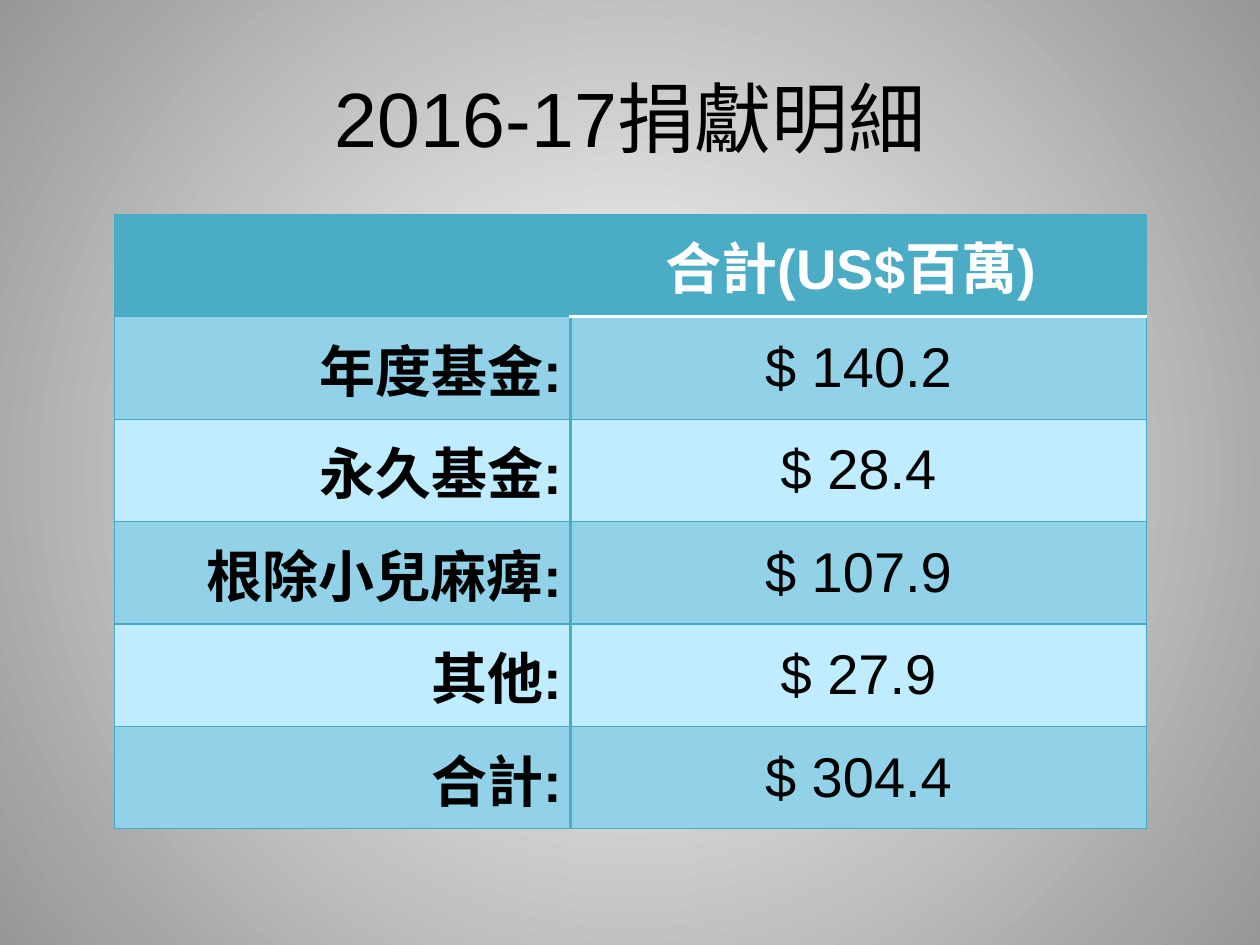
from lxml import etree
from pptx import Presentation
from pptx.dml.color import RGBColor
from pptx.enum.text import MSO_ANCHOR, PP_ALIGN
from pptx.oxml import parse_xml
from pptx.oxml.ns import nsdecls, qn
from pptx.util import Inches, Pt

MIDDLE = MSO_ANCHOR.MIDDLE
LEFT, CENTER, RIGHT = PP_ALIGN.LEFT, PP_ALIGN.CENTER, PP_ALIGN.RIGHT
TEAL, EDGE, WHITE, BLACK = "4BACC6", "46AAC5", "FFFFFF", "000000"
DARK, LIGHT = "91D2E8", "BFECFF"


def style(para, size, color, bold, align):
    para.alignment = align
    for run in para.runs:
        font = run.font
        font.name, font.size, font.bold = "Arial", Pt(size), bold
        font.color.rgb = RGBColor.from_string(color)


def border(cell, **sides):
    """Draw cell edges; each side is a (colour, points) pair."""
    props = cell._tc.get_or_add_tcPr()
    for spot, side in enumerate("LRTB"):
        color, width = sides[side]
        line = etree.Element(qn(f"a:ln{side}"), w=str(Pt(width)))
        fill = etree.SubElement(line, qn("a:solidFill"))
        etree.SubElement(fill, qn("a:srgbClr"), val=color)
        props.insert(spot, line)


prs = Presentation()
prs.slide_width, prs.slide_height = Inches(10), Inches(7.5)
slide = prs.slides.add_slide(prs.slide_layouts[5])

# Radial background
back = slide.background.fill
back.gradient()
for stop, color, place in zip(back.gradient_stops, (WHITE, "979797"), (0, 1)):
    stop.color.rgb = RGBColor.from_string(color)
    stop.position = place
grad = slide.element.find(".//" + qn("a:gradFill"))
grad.replace(grad.find(qn("a:lin")), parse_xml(
    f'<a:path {nsdecls("a")} path="circle">'
    '<a:fillToRect l="50000" t="50000" r="50000" b="50000"/></a:path>'))

# Title
title = slide.shapes.title
title.left, title.top = Inches(0.5), Inches(0.3)
title.width, title.height = Inches(9), Inches(1.25)
title.text_frame.text = "2016-17捐獻明細"
title.text_frame.vertical_anchor = MIDDLE
style(title.text_frame.paragraphs[0], 44, BLACK, False, CENTER)

# Donation table
rows = [
    ("", "合計(US$百萬) "),
    ("年度基金:", "$ 140.2"),
    ("永久基金:", "$ 28.4"),
    ("根除小兒麻痺:", "$ 107.9"),
    ("其他:", "$ 27.9"),
    ("合計:", "$ 304.4"),
]
table = slide.shapes.add_table(
    len(rows), 2, Inches(0.91), Inches(1.7), Inches(8.19), Inches(4.88)).table
table.columns[0].width, table.columns[1].width = Inches(3.62), Inches(4.57)

thin, thick, rule = (EDGE, 0.75), (TEAL, 2), (WHITE, 2)
for r, row in enumerate(rows):
    table.rows[r].height = Inches(4.88 / len(rows))
    for c, text in enumerate(row):
        cell = table.cell(r, c)
        cell.text_frame.text = text
        cell.vertical_anchor = MIDDLE
        cell.margin_left = cell.margin_right = Inches(0.07)
        cell.margin_top = cell.margin_bottom = 0
        head = r == 0
        style(cell.text_frame.paragraphs[0], 32, WHITE if head else BLACK,
              head or c == 0, CENTER if head or c else RIGHT)
        cell.fill.solid()
        shade = TEAL if head else DARK if r % 2 else LIGHT
        cell.fill.fore_color.rgb = RGBColor.from_string(shade)
        border(cell, L=thick if c else thin, R=thin if c else thick,
               T=rule if r == 1 and c else thin,
               B=rule if head and c else thin)

prs.save("out.pptx")
